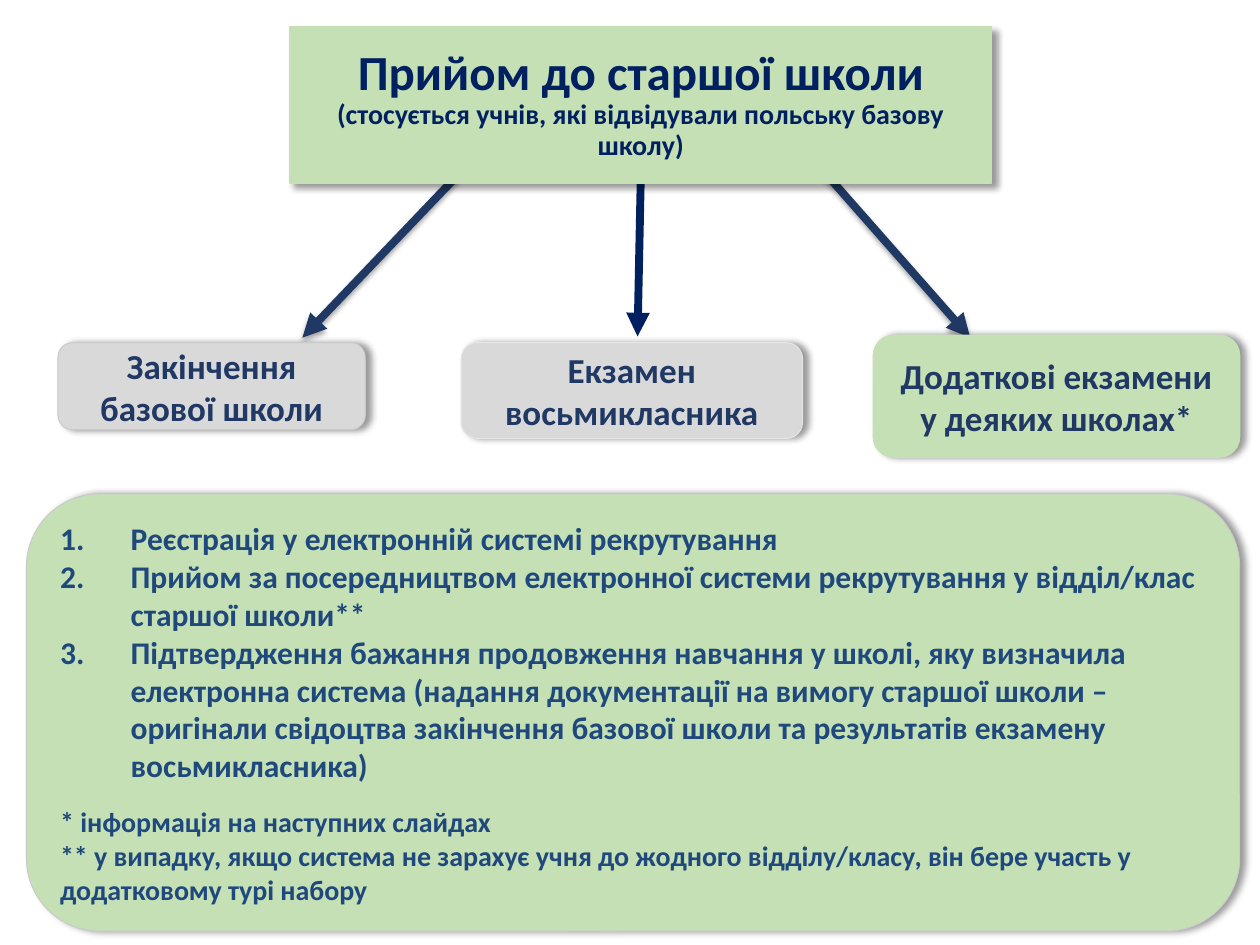
from dataclasses import dataclass

from lxml import etree
from pptx import Presentation
from pptx.dml.color import RGBColor
from pptx.enum.shapes import MSO_CONNECTOR, MSO_SHAPE
from pptx.enum.text import MSO_ANCHOR, MSO_AUTO_SIZE, PP_ALIGN
from pptx.oxml.ns import qn
from pptx.util import Inches, Pt

ROUNDED = MSO_SHAPE.ROUNDED_RECTANGLE
STRAIGHT = MSO_CONNECTOR.STRAIGHT
MIDDLE = MSO_ANCHOR.MIDDLE
NO_FIT = MSO_AUTO_SIZE.NONE
LEFT, CENTER = PP_ALIGN.LEFT, PP_ALIGN.CENTER
TITLE_ONLY = 5
BOTTOM = 2


@dataclass(frozen=True)
class Theme:
    font: str = "Calibri"
    green: str = "C5E0B4"
    grey: str = "D9D9D9"
    edge: str = "C9C9C9"
    light_edge: str = "E7E6E6"
    navy: str = "002060"
    dark_blue: str = "203864"
    blue: str = "1F497D"
    title_size: int = 28
    box_size: int = 20
    step_size: int = 18
    note_size: int = 16
    arrow_width: float = 4.5


class SlideBuilder:
    def __init__(self, slide, theme):
        self.s = slide
        self.theme = theme

    def style_run(self, r, size, color):
        r.font.name = self.theme.font
        r.font.size = Pt(size)
        r.font.bold = True
        r.font.color.rgb = RGBColor.from_string(color)

    def shadow(self, sp, alpha=40, blur=4, dist=3, angle=0):
        """Add an outer black shadow; alpha in percent, blur and dist in points."""
        effects = etree.SubElement(sp._element.spPr, qn("a:effectLst"))
        outer = etree.SubElement(
            effects, qn("a:outerShdw"), blurRad=str(Pt(blur)), dist=str(Pt(dist)),
            dir=str(angle * 60000), algn="tl", rotWithShape="0")
        black = etree.SubElement(outer, qn("a:srgbClr"), val="000000")
        etree.SubElement(black, qn("a:alpha"), val=str(alpha * 1000))

    def paint(self, sp, fill, edge, width=0.5, angle=0):
        """Give a shape its fill, outline and shadow, and prepare its text frame."""
        sp.fill.solid()
        sp.fill.fore_color.rgb = RGBColor.from_string(fill)
        sp.line.color.rgb = RGBColor.from_string(edge)
        sp.line.width = Pt(width)
        self.shadow(sp, angle=angle)
        tf = sp.text_frame
        tf.word_wrap = True
        tf.auto_size = NO_FIT
        tf.vertical_anchor = MIDDLE
        return tf

    def title(self, x, y, w, h, heading, detail):
        t = self.theme
        sp = self.s.shapes.title
        sp.left, sp.top, sp.width, sp.height = map(Inches, (x, y, w, h))
        tf = self.paint(sp, t.green, t.green, width=1, angle=45)
        p = tf.paragraphs[0]
        p.text = f"{heading}\v{detail}"
        p.alignment = CENTER
        p.line_spacing = 0.9
        for r, size in zip(p.runs, (t.title_size, t.note_size)):
            self.style_run(r, size, t.navy)
        return sp

    def box(self, x, y, w, h, fill, edge):
        sp = self.s.shapes.add_shape(ROUNDED, *map(Inches, (x, y, w, h)))
        return self.paint(sp, fill, edge)

    def label_box(self, x, y, w, h, text, fill, edge):
        tf = self.box(x, y, w, h, fill, edge)
        tf.text = text
        p = tf.paragraphs[0]
        p.alignment = CENTER
        self.style_run(p.runs[0], self.theme.box_size, self.theme.dark_blue)

    def steps_box(self, x, y, w, h, steps, notes):
        """Draw the panel of numbered steps followed by footnotes."""
        t = self.theme
        tf = self.box(x, y, w, h, t.green, t.edge)
        tf.text = "\n".join(steps + notes)
        for i, p in enumerate(tf.paragraphs):
            p.alignment = LEFT
            is_step = i < len(steps)
            self.style_run(p.runs[0], t.step_size if is_step else t.note_size, t.blue)
            if is_step:
                pPr = p._p.get_or_add_pPr()
                pPr.set("marL", str(Inches(0.56)))
                pPr.set("indent", str(-Inches(0.56)))
                etree.SubElement(pPr, qn("a:buAutoNum"), type="arabicPeriod")
        tf.paragraphs[len(steps)].space_before = Pt(12)

    def arrow(self, start, end, color, shadowed=True):
        ends = map(Inches, (*start, *end))
        line = self.s.shapes.add_connector(STRAIGHT, *ends)
        line.line.color.rgb = RGBColor.from_string(color)
        line.line.width = Pt(self.theme.arrow_width)
        spPr = line._element.spPr
        etree.SubElement(spPr.find(qn("a:ln")), qn("a:tailEnd"), type="triangle")
        if shadowed:
            self.shadow(line, alpha=35, blur=3.1, dist=1.8, angle=90)
        else:
            etree.SubElement(spPr, qn("a:effectLst"))
        return line

    def bring_to_front(self, sp):
        self.s.shapes._spTree.append(sp._element)


STEPS = [
    "Реєстрація у електронній системі рекрутування",
    "Прийом за посередництвом електронної системи рекрутування у відділ/клас "
    "старшої школи**",
    "Підтвердження бажання продовження навчання у школі, яку визначила електронна "
    "система (надання документації на вимогу старшої школи – оригінали свідоцтва "
    "закінчення базової школи та результатів екзамену восьмикласника)",
]
NOTES = [
    "* інформація на наступних слайдах",
    "** у випадку, якщо система не зарахує учня до жодного відділу/класу, "
    "він бере участь у додатковому турі набору",
]


def main():
    prs = Presentation()
    prs.slide_width, prs.slide_height = Inches(10), Inches(7.5)
    t = Theme()
    b = SlideBuilder(prs.slides.add_slide(prs.slide_layouts[TITLE_ONLY]), t)

    title = b.title(2.3, 0.21, 5.57, 1.24, "Прийом до старшої школи",
                    "(стосується учнів, які відвідували польську базову школу)")
    b.arrow((6.52, 1.34), (7.7, 2.68), t.dark_blue)
    b.label_box(3.66, 2.72, 2.71, 0.76, "Екзамен восьмикласника", t.grey, t.light_edge)
    b.label_box(6.93, 2.66, 2.91, 0.97, "Додаткові екзамени у деяких школах*",
                t.green, t.green)
    b.steps_box(0.21, 3.92, 9.63, 3.47, STEPS, NOTES)
    middle = b.arrow((5.08, 1.45), (5.06, 2.67), t.navy, shadowed=False)
    middle.begin_connect(title, BOTTOM)
    b.arrow((3.71, 1.31), (2.4, 2.68), t.dark_blue)
    b.label_box(0.46, 2.72, 2.44, 0.69, "Закінчення базової школи", t.grey, t.edge)
    b.bring_to_front(title)

    prs.save("out.pptx")


if __name__ == "__main__":
    main()
